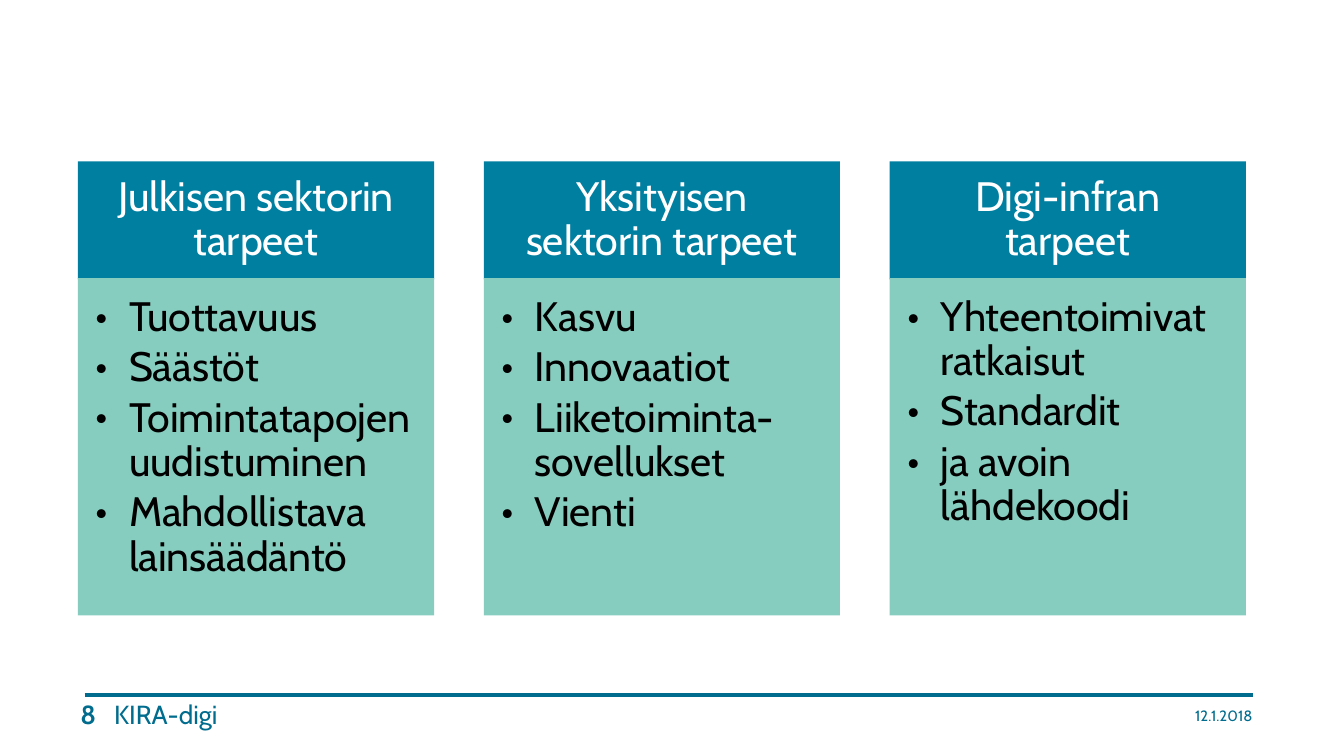
import pptx
import pptx.util
import pptx.dml.color
import pptx.enum.shapes
import pptx.enum.text
import pptx.oxml.ns
from lxml import etree

Inches = pptx.util.Inches
Pt = pptx.util.Pt
PP_ALIGN = pptx.enum.text.PP_ALIGN
MSO_ANCHOR = pptx.enum.text.MSO_ANCHOR
qn = pptx.oxml.ns.qn

COLOURS = {
    "header": "007FA0",
    "body": "86CDBF",
    "footer": "016C8D",
    "white": "FFFFFF",
    "black": "000000",
}
NEEDS = [
    ("Julkisen sektorin tarpeet",
     ["Tuottavuus", "Säästöt", "Toimintatapojen uudistuminen", "Mahdollistava lainsäädäntö"]),
    ("Yksityisen sektorin tarpeet",
     ["Kasvu", "Innovaatiot", "Liiketoiminta-sovellukset", "Vienti"]),
    ("Digi-infran tarpeet",
     ["Yhteentoimivat ratkaisut", "Standardit", "ja avoin lähdekoodi"]),
]
LEFT, PITCH, WIDTH = 0.58, 3.02, 2.65
HEADER_TOP, HEADER_HEIGHT = 1.2, 0.88
BODY_TOP, BODY_HEIGHT = 2.07, 2.51


def add_panel(left, top, height, colour, insets, anchor):
    panel = slide.shapes.add_shape(
        pptx.enum.shapes.MSO_SHAPE.RECTANGLE,
        Inches(left), Inches(top), Inches(WIDTH), Inches(height))
    panel.shadow.inherit = False
    panel.fill.solid()
    panel.fill.fore_color.rgb = pptx.dml.color.RGBColor.from_string(COLOURS[colour])
    panel.line.fill.background()
    frame = panel.text_frame
    frame.word_wrap = True
    frame.vertical_anchor = anchor
    frame.margin_left, frame.margin_top, frame.margin_right, frame.margin_bottom = map(Inches, insets)
    return frame


def style(paragraph, size, colour, alignment=PP_ALIGN.LEFT):
    paragraph.alignment = alignment
    paragraph.font.name = "Cabin"
    paragraph.font.size = Pt(size)
    paragraph.font.color.rgb = pptx.dml.color.RGBColor.from_string(COLOURS[colour])


deck = pptx.Presentation()
deck.slide_width = Inches(10)
deck.slide_height = Inches(5.625)
slide = deck.slides.add_slide(deck.slide_layouts[6])

footer = slide.shapes.add_textbox(Inches(0.5), Inches(5.15), Inches(6.45), Inches(0.22)).text_frame
footer.word_wrap = True
footer_line = footer.paragraphs[0]
tabs = etree.SubElement(footer_line._p.get_or_add_pPr(), qn("a:tabLst"))
etree.SubElement(tabs, qn("a:tab"), pos=str(Inches(0.25)), algn="l")
style(footer_line, 14, "footer")
page_number = footer_line.add_run()
page_number.text = "8"
page_number.font.bold = True
footer_line.add_run().text = "\tKIRA-digi"

footer_rule = slide.shapes.add_connector(
    pptx.enum.shapes.MSO_CONNECTOR.STRAIGHT, Inches(0.63), Inches(5.17), Inches(9.32), Inches(5.17))
footer_rule.line.color.rgb = pptx.dml.color.RGBColor.from_string(COLOURS["footer"])
footer_rule.line.width = Pt(2.25)
etree.SubElement(footer_rule._element.spPr, qn("a:effectLst"))

date = slide.shapes.add_textbox(Inches(8.29), Inches(5.24), Inches(1.03), Inches(0.17)).text_frame
date.word_wrap = True
date.vertical_anchor = MSO_ANCHOR.MIDDLE
date.margin_left = date.margin_top = date.margin_right = date.margin_bottom = 0
date.text = "12.1.2018"
style(date.paragraphs[0], 8, "footer", PP_ALIGN.RIGHT)

for column, (heading, needs) in enumerate(NEEDS):
    left = LEFT + column * PITCH
    header = add_panel(left, HEADER_TOP, HEADER_HEIGHT, "header",
                       (0.17, 0.1, 0.17, 0.1), MSO_ANCHOR.MIDDLE)
    header.text = heading
    header.paragraphs[0].line_spacing = 0.9
    style(header.paragraphs[0], 22, "white", PP_ALIGN.CENTER)

    body = add_panel(left, BODY_TOP, BODY_HEIGHT, "body",
                     (0.13, 0.13, 0.17, 0.19), MSO_ANCHOR.TOP)
    body.text = "\n".join(needs)
    for need in body.paragraphs:
        need.line_spacing = 0.9
        need.space_after = Pt(3.3)
        properties = need._p.get_or_add_pPr()
        properties.set("marL", str(Inches(0.25)))
        properties.set("indent", str(-Inches(0.25)))
        etree.SubElement(properties, qn("a:buFont"), typeface="Cabin")
        etree.SubElement(properties, qn("a:buChar"), char="•")
        style(need, 22, "black")

deck.save("out.pptx")
